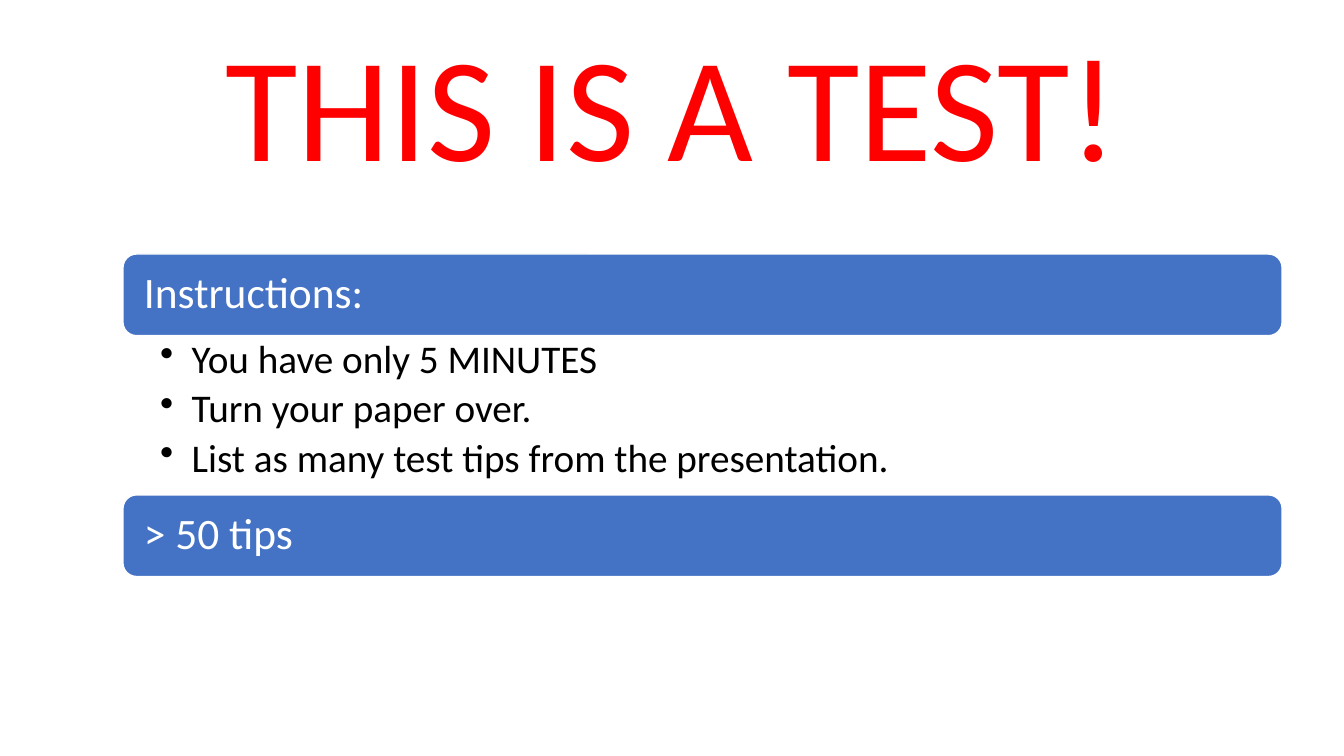
"""Build the slide that sets a timed test on the presentation's tips."""
import dataclasses
import typing

import lxml.etree
import pptx
import pptx.dml.color
import pptx.enum.shapes
import pptx.enum.text
import pptx.oxml.ns
import pptx.util

Pt = pptx.util.Pt
ALIGN = pptx.enum.text.PP_ALIGN
ANCHOR = pptx.enum.text.MSO_ANCHOR

COLOURS = {"title": "FF0000", "bar": "4472C4", "paper": "FFFFFF", "ink": "000000"}
FONT = "Calibri"
LIST_LEFT, LIST_TOP, LIST_WIDTH = 87.84, 181.44, 828
BAR_HEIGHT, TIPS_HEIGHT = 58.32, 113.76
BULLET_INDENT = 22.5


@dataclasses.dataclass(frozen=True)
class Section:
    """A heading bar and the points below it."""

    heading: str
    points: tuple[str, ...] = ()


SECTIONS = (
    Section(
        "Instructions:",
        (
            "You have only 5 MINUTES",
            "Turn your paper over.",
            "List as many test tips from the presentation.",
        ),
    ),
    Section("> 50 tips"),
)


def colour(name: str) -> pptx.dml.color.RGBColor:
    """Return a palette colour."""
    return pptx.dml.color.RGBColor.from_string(COLOURS[name])


def add_bullet(paragraph: typing.Any) -> None:
    """Give a paragraph a hanging round bullet."""
    properties = paragraph._p.get_or_add_pPr()
    properties.set("marL", str(Pt(BULLET_INDENT)))
    properties.set("indent", str(-Pt(BULLET_INDENT)))
    bullet = lxml.etree.SubElement(properties, pptx.oxml.ns.qn("a:buChar"))
    bullet.set("char", "•")


def write(
    frame: typing.Any,
    *lines: str,
    size: float,
    ink: str,
    align: typing.Any = ALIGN.LEFT,
    anchor: typing.Any = ANCHOR.MIDDLE,
    insets: tuple[float, float, float, float] = (7.2, 3.6, 7.2, 3.6),
    bulleted: bool = False,
    space_after: float = 0,
) -> None:
    """Fill a text frame with formatted paragraphs."""
    frame.word_wrap = True
    frame.auto_size = pptx.enum.text.MSO_AUTO_SIZE.NONE
    frame.vertical_anchor = anchor
    frame.margin_left, frame.margin_top, frame.margin_right, frame.margin_bottom = map(Pt, insets)
    for index, line in enumerate(lines):
        paragraph = frame.add_paragraph() if index else frame.paragraphs[0]
        paragraph.text = line
        if bulleted:
            paragraph.level = 1
            add_bullet(paragraph)
        paragraph.alignment = align
        paragraph.line_spacing = 0.9
        paragraph.space_after = Pt(space_after)
        font = paragraph.runs[0].font
        font.name, font.size = FONT, Pt(size)
        font.color.rgb = colour(ink)


def add_section(slide: typing.Any, section: Section, top: float) -> float:
    """Draw a section and return the top of the next one."""
    bar = slide.shapes.add_shape(
        pptx.enum.shapes.MSO_SHAPE.ROUNDED_RECTANGLE,
        Pt(LIST_LEFT), Pt(top), Pt(LIST_WIDTH), Pt(BAR_HEIGHT),
    )
    bar.shadow.inherit = False
    bar.fill.solid()
    bar.fill.fore_color.rgb = colour("bar")
    bar.line.color.rgb = colour("paper")
    bar.line.width = Pt(1)
    write(bar.text_frame, section.heading, size=31, ink="paper", insets=(12.2, 9.4, 12.2, 9.4))
    top += BAR_HEIGHT
    if not section.points:
        return top
    points = slide.shapes.add_textbox(Pt(LIST_LEFT), Pt(top), Pt(LIST_WIDTH), Pt(TIPS_HEIGHT))
    write(
        points.text_frame, *section.points, size=28, ink="ink", anchor=ANCHOR.TOP,
        insets=(26.6, 2.9, 15.8, 2.9), bulleted=True, space_after=5,
    )
    return top + TIPS_HEIGHT


def main() -> None:
    """Build and save the slide."""
    deck = pptx.Presentation()
    deck.slide_width, deck.slide_height = Pt(960), Pt(540)
    slide = deck.slides.add_slide(deck.slide_layouts[5])
    title = slide.shapes.title
    title.left, title.top, title.width, title.height = map(Pt, (66, 28.75, 828, 104.4))
    write(title.text_frame, "THIS IS A TEST!", size=106, ink="title", align=ALIGN.CENTER)
    top = LIST_TOP
    for section in SECTIONS:
        top = add_section(slide, section, top)
    deck.save("out.pptx")


if __name__ == "__main__":
    main()
